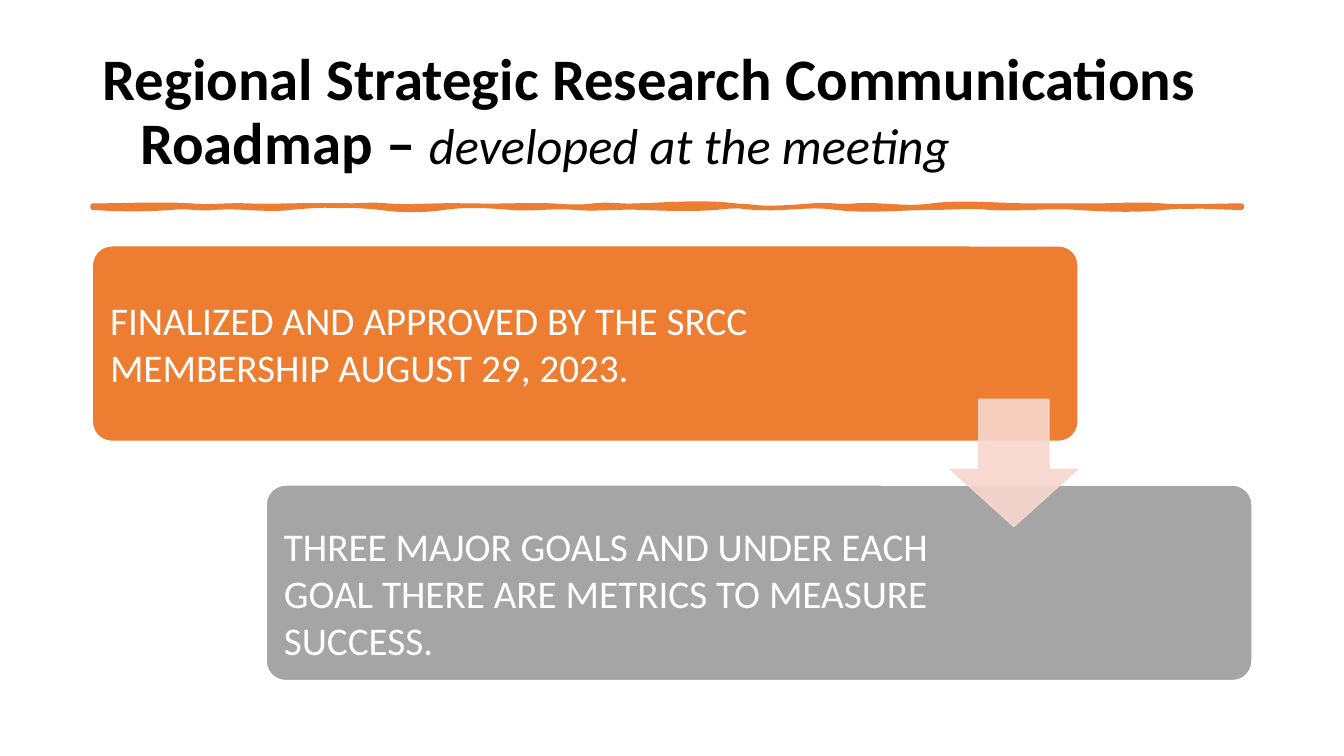
from typing import NamedTuple

from lxml.etree import SubElement
from pptx import Presentation
from pptx.dml.color import RGBColor
from pptx.enum.shapes import MSO_SHAPE as Preset
from pptx.enum.text import MSO_ANCHOR as Anchor, PP_ALIGN as Align
from pptx.oxml.ns import qn
from pptx.shapes.autoshape import Shape
from pptx.slide import Slide
from pptx.text.text import TextFrame
from pptx.util import Pt

BLACK = RGBColor(0x00, 0x00, 0x00)
WHITE = RGBColor(0xFF, 0xFF, 0xFF)
ORANGE = RGBColor(0xED, 0x7D, 0x31)
GREY = RGBColor(0xA5, 0xA5, 0xA5)
BLUSH = RGBColor(0xF8, 0xD7, 0xCE)
FONT = "Calibri"


class Box(NamedTuple):
    left: float
    top: float
    width: float
    height: float

    def lengths(self) -> tuple[Pt, ...]:
        return tuple(Pt(value) for value in self)


class Step(NamedTuple):
    panel: Box
    text_box: Box
    color: RGBColor
    text: str


class Wave(NamedTuple):
    """One stretch of a brush edge: where it ends and its two vertical bends."""
    end: float
    bend_1: float
    bend_2: float


STEPS = [
    Step(Box(65.9, 175.6, 704.2, 139.7), Box(70.2, 179.3, 559.4, 131.8), ORANGE,
         "FINALIZED AND APPROVED BY THE SRCC MEMBERSHIP AUGUST 29, 2023."),
    Step(Box(190.1, 346.5, 704.2, 139.7), Box(194.4, 357.7, 480.2, 131.8), GREY,
         "THREE MAJOR GOALS AND UNDER EACH GOAL THERE ARE METRICS TO MEASURE SUCCESS."),
]
ARROW = Box(678.8, 285.3, 90.8, 90.8)

RULE_LEFT, RULE_RIGHT = 66.2, 887
RULE_TOP, RULE_BOTTOM = 146.9, 148.3
TOP_EDGE = [
    Wave(136.8, 0, -1.4), Wave(175.7, 1.4, -0.7), Wave(238.3, 0.7, -0.7),
    Wave(276.5, 0.7, -1.4), Wave(331.2, 1.4, -0.7), Wave(394.6, 0.7, -0.7),
    Wave(424.1, 0.7, 1.4), Wave(454.3, -1.4, 0.7), Wave(525.6, -0.7, -2.9),
    Wave(580.3, 2.9, 1.4), Wave(610.6, -1.4, 1.4), Wave(665.3, -1.4, 2.9),
    Wave(736.6, -2.9, 0), Wave(782.6, 0, 0), Wave(829.4, 0, -1.4),
    Wave(RULE_RIGHT, 1.4, 0),
]
BOTTOM_EDGE = [
    Wave(RULE_RIGHT, 0, 0),
    Wave(832.3, 0, -2.2), Wave(769, 2.2, 1.4), Wave(706.3, -1.4, 1.4),
    Wave(668.2, -1.4, 0), Wave(596.9, 0, 2.9), Wave(542.2, -2.9, 1.4),
    Wave(511.9, -1.4, -1.4), Wave(457.2, 1.4, 0.7), Wave(410.4, -0.7, 1.4),
    Wave(364.3, -1.4, 1.4), Wave(317.5, -1.4, -2.2), Wave(271.4, 2.2, 2.2),
    Wave(208.1, -2.2, -2.2), Wave(153.4, 2.2, -1.4), Wave(123.1, 1.4, -1.4),
    Wave(RULE_LEFT, 1.4, 1.4),
]


def bend_segments(shape: Shape, waves: list[Wave]) -> None:
    """Turn each straight segment of the outline into the cubic curve of its wave."""
    outline = shape._element.spPr.find(".//" + qn("a:path"))
    start = outline.find(qn("a:moveTo"))[0]
    for segment, wave in zip(outline.findall(qn("a:lnTo")), waves):
        end = segment[0]
        start_x, end_x = int(start.get("x")), int(end.get("x"))
        level = int(end.get("y"))
        curve = segment.makeelement(qn("a:cubicBezTo"))
        for third, bend in enumerate((wave.bend_1, wave.bend_2), start=1):
            control = SubElement(curve, qn("a:pt"))
            control.set("x", str(start_x + (end_x - start_x) * third // 3))
            control.set("y", str(level + Pt(bend)))
        outline.replace(segment, curve)
        curve.append(end)
        start = end


def paint(shape: Shape, fill: RGBColor, line: RGBColor, line_width: float) -> None:
    shape.shadow.inherit = False
    shape.fill.solid()
    shape.fill.fore_color.rgb = fill
    shape.line.color.rgb = line
    shape.line.width = Pt(line_width)


def add_text_frame(slide: Slide, box: Box) -> TextFrame:
    frame = slide.shapes.add_textbox(*box.lengths()).text_frame
    frame.word_wrap = True
    frame.vertical_anchor = Anchor.MIDDLE
    return frame


def add_title(slide: Slide) -> None:
    paragraph = add_text_frame(slide, Box(66.2, 28.8, 828, 104.4)).paragraphs[0]
    paragraph.line_spacing = 0.9
    properties = paragraph._p.get_or_add_pPr()
    properties.set("marL", str(Pt(27)))
    properties.set("indent", str(Pt(-27)))
    name = paragraph.add_run()
    name.text = "Regional Strategic Research Communications Roadmap – "
    name.font.size = Pt(42)
    name.font.bold = True
    remark = paragraph.add_run()
    remark.text = "developed at the meeting"
    remark.font.size = Pt(36)
    remark.font.italic = True
    for run in (name, remark):
        run.font.name = FONT
        run.font.color.rgb = BLACK


def add_brush_rule(slide: Slide) -> None:
    points = [(Pt(wave.end), Pt(level))
              for edge, level in ((TOP_EDGE, RULE_TOP), (BOTTOM_EDGE, RULE_BOTTOM))
              for wave in edge]
    builder = slide.shapes.build_freeform(Pt(RULE_LEFT), Pt(RULE_TOP))
    builder.add_line_segments(points, close=True)
    rule = builder.convert_to_shape()
    bend_segments(rule, TOP_EDGE + BOTTOM_EDGE)
    paint(rule, ORANGE, ORANGE, 3.25)


def add_step(slide: Slide, step: Step) -> None:
    panel = slide.shapes.add_shape(Preset.ROUNDED_RECTANGLE, *step.panel.lengths())
    panel.adjustments[0] = 0.1
    paint(panel, step.color, WHITE, 1)
    frame = add_text_frame(slide, step.text_box)
    frame.margin_left = frame.margin_right = Pt(8.4)
    frame.margin_top = frame.margin_bottom = Pt(8.4)
    paragraph = frame.paragraphs[0]
    paragraph.alignment = Align.LEFT
    paragraph.text = step.text
    paragraph.font.name = FONT
    paragraph.font.size = Pt(28)
    paragraph.font.color.rgb = WHITE


def add_arrow(slide: Slide) -> None:
    arrow = slide.shapes.add_shape(Preset.DOWN_ARROW, *ARROW.lengths())
    arrow.adjustments[0] = 0.55
    arrow.adjustments[1] = 0.45
    paint(arrow, BLUSH, BLUSH, 1)
    for color in arrow._element.spPr.iter(qn("a:srgbClr")):
        SubElement(color, qn("a:alpha")).set("val", "90000")


def main() -> None:
    presentation = Presentation()
    presentation.slide_width = Pt(960)
    presentation.slide_height = Pt(540)
    slide = presentation.slides.add_slide(presentation.slide_layouts[6])
    add_title(slide)
    add_brush_rule(slide)
    for step in STEPS:
        add_step(slide, step)
    add_arrow(slide)
    presentation.save("out.pptx")


if __name__ == "__main__":
    main()
